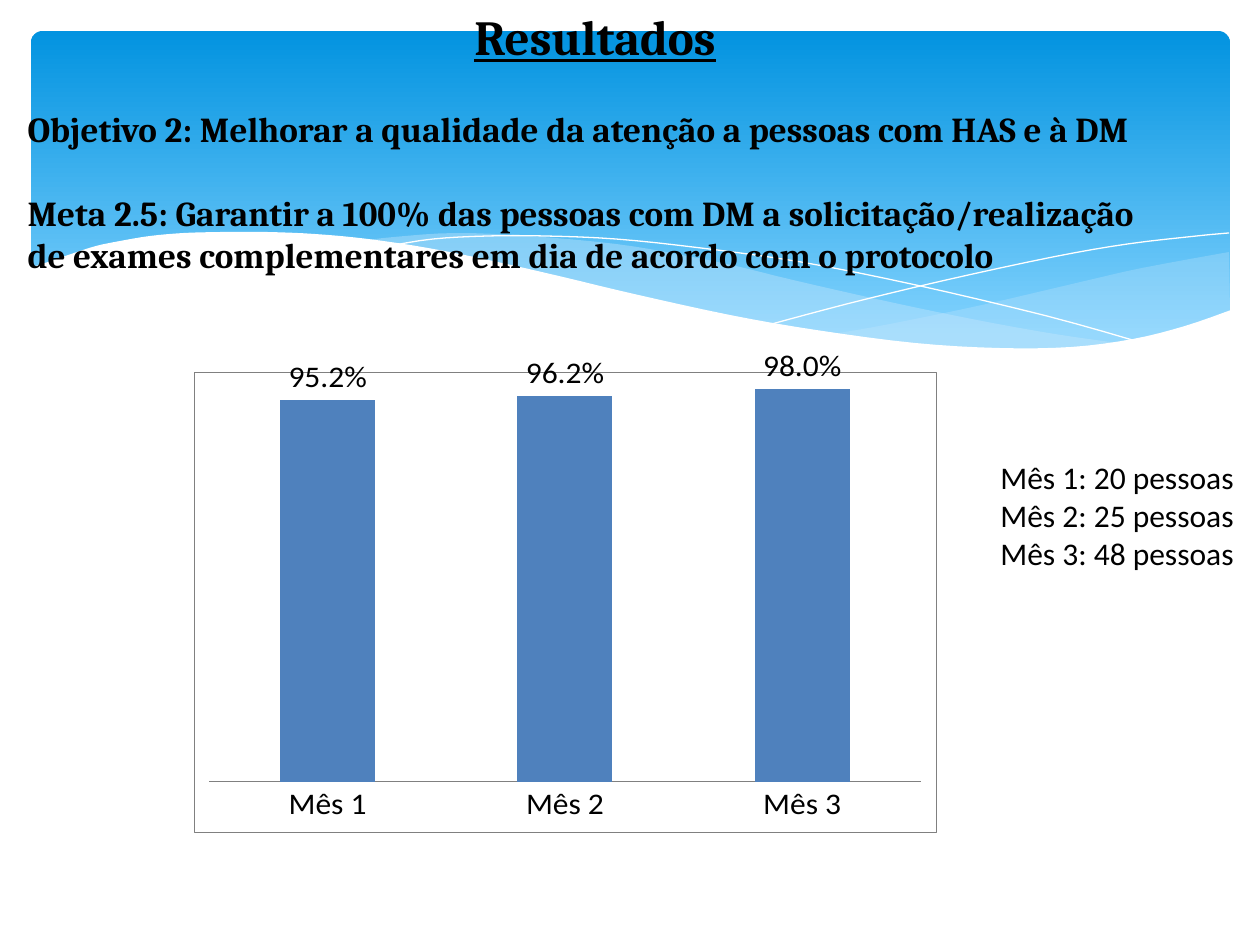
from dataclasses import dataclass

from lxml.etree import SubElement
from pptx import Presentation
from pptx.chart.data import CategoryChartData
from pptx.dml.color import RGBColor as Rgb
from pptx.enum.chart import XL_CHART_TYPE as ChartType
from pptx.enum.chart import XL_LABEL_POSITION as LabelPosition
from pptx.enum.chart import XL_TICK_MARK as TickMark
from pptx.enum.shapes import MSO_SHAPE as Preset
from pptx.enum.text import MSO_ANCHOR as Anchor
from pptx.enum.text import MSO_AUTO_SIZE as AutoSize
from pptx.enum.text import PP_ALIGN as Align
from pptx.oxml import parse_xml
from pptx.oxml.ns import nsdecls, qn
from pptx.util import Pt

SCALE = 914400 / 126


@dataclass(frozen=True)
class Theme:
    white: str = "FFFFFF"
    ink: str = "000000"
    sky_top: str = "0293E0"
    sky_bottom: str = "83D3FE"
    mist: str = "C6E7FC"
    bar: str = "4F81BD"
    rule: str = "808080"
    serif: str = "Cambria"
    sans: str = "Calibri"
    title_size: int = 28
    goal_size: int = 20
    note_size: int = 18
    chart_size: int = 10
    hairline: float = 0.25


THEME = Theme()

TITLE = ["Resultados"]
GOALS = [
    "Objetivo 2: Melhorar a qualidade da atenção a pessoas com HAS e à DM",
    "Meta 2.5: Garantir a 100% das pessoas com DM a solicitação/realização "
    "de exames complementares em dia de acordo com o protocolo",
]
NOTES = ["Mês 1: 20 pessoas", "Mês 2: 25 pessoas", "Mês 3: 48 pessoas"]
MONTHS = ["Mês 1", "Mês 2", "Mês 3"]
SHARES = [0.952, 0.962, 0.98]

SLIDE = (1260, 945)
BANNER_AT = (31, 31, 1199, 341)
TITLE_AT = (15, 0, 1160, 90)
GOALS_AT = (15, 101, 1160, 240)
NOTES_AT = (988, 452, 307, 127)
CHART_AT = (194, 348, 742, 484)

RIGHT_MIST = [
    [(1229, 252), (1142, 268), (1085, 281), (982, 305), (890, 324), (833, 334)],
    [(833, 334), (905, 343), (984, 349), (1026, 350), (1076, 348), (1130, 340),
     (1178, 329), (1213, 318), (1230, 311)],
]
MIDDLE_MIST = [
    [(1125, 344), (1055, 334), (977, 320), (890, 302), (793, 280), (736, 266),
     (682, 255), (616, 244), (529, 236), (455, 233), (394, 237), (360, 241)],
    [(360, 241), (431, 251), (509, 266), (566, 280), (668, 302), (757, 321),
     (838, 335), (910, 345), (974, 349), (1031, 350), (1080, 349), (1125, 344)],
]
FALLING_LINE = [
    [(389, 246), (433, 239), (488, 236), (545, 236), (616, 239), (701, 248),
     (801, 262), (916, 285), (1047, 316), (1143, 343)],
]
RISING_LINE = [
    [(772, 324), (847, 304), (942, 281), (1053, 257), (1128, 244), (1197, 236),
     (1229, 233)],
]
WHITE_WAVE = [
    [(1231, 310), (1185, 326), (1133, 339), (1071, 347), (999, 348), (915, 343),
     (816, 330), (730, 315), (634, 294), (563, 277), (493, 261), (428, 248),
     (368, 239), (315, 234), (266, 232), (223, 232), (184, 233), (150, 236),
     (120, 241), (96, 246), (74, 253), (45, 263), (29, 268)],
    [(29, 415), (1231, 415)],
]
WAVES = [
    (RIGHT_MIST, {"fill": THEME.mist, "alpha": 29}),
    (MIDDLE_MIST, {"fill": THEME.mist, "alpha": 40}),
    (FALLING_LINE, {"line": THEME.white}),
    (RISING_LINE, {"line": THEME.white}),
    (WHITE_WAVE, {"fill": THEME.white}),
]


def emu(*lengths):
    return [round(length * SCALE) for length in lengths]


def color(value):
    return Rgb.from_string(value)


def smooth_edge(knots, steps=4):
    padded = [knots[0], *knots, knots[-1]]
    points = [knots[0]]
    for a, b, c, d in zip(padded, padded[1:], padded[2:], padded[3:]):
        for step in range(1, steps + 1):
            t = step / steps
            points.append(tuple(
                (2 * q + (r - p) * t + (2 * p - 5 * q + 4 * r - s) * t**2
                 + (3 * q - p - 3 * r + s) * t**3) / 2
                for p, q, r, s in zip(a, b, c, d)))
    return points


def add_wave(page, edges, fill=None, line=None, alpha=None):
    points = [emu(*point) for edge in edges for point in smooth_edge(edge)]
    builder = page.shapes.build_freeform(*points[0], scale=1.0)
    builder.add_line_segments(points[1:], close=fill is not None)
    wave = builder.convert_to_shape()
    wave.shadow.inherit = False
    if fill:
        wave.fill.solid()
        wave.fill.fore_color.rgb = color(fill)
        wave.line.fill.background()
    else:
        wave.fill.background()
        wave.line.color.rgb = color(line)
        wave.line.width = Pt(0)
    if alpha:
        tint = next(wave.element.iter(qn("a:srgbClr")))
        SubElement(tint, qn("a:alpha")).set("val", str(alpha * 1000))


def add_banner(page):
    banner = page.shapes.add_shape(Preset.ROUNDED_RECTANGLE, *emu(*BANNER_AT))
    banner.adjustments[0] = 0.034
    banner.shadow.inherit = False
    banner.line.fill.background()
    banner.fill.gradient()
    banner.fill.gradient_angle = 270
    stops = [(0, THEME.sky_top), (0.9, THEME.sky_bottom)]
    for stop, (position, shade) in zip(banner.fill.gradient_stops, stops):
        stop.position = position
        stop.color.rgb = color(shade)


def set_font(font, size, name):
    font.size = Pt(size)
    font.name = name
    font.color.rgb = color(THEME.ink)


def write(box, at, lines, size, name, bold=False, underline=False,
          align=Align.LEFT, gap=0):
    box.left, box.top, box.width, box.height = emu(*at)
    frame = box.text_frame
    frame.word_wrap = True
    frame.auto_size = AutoSize.NONE
    frame.vertical_anchor = Anchor.TOP
    for index, line in enumerate(lines):
        para = frame.add_paragraph() if index else frame.paragraphs[0]
        para.alignment = align
        para.space_before = Pt(gap if index else 0)
        properties = para._p.get_or_add_pPr()
        properties.set("marL", "0")
        properties.set("indent", "0")
        SubElement(properties, qn("a:buNone"))
        span = para.add_run()
        span.text = line
        set_font(span.font, size, name)
        span.font.bold = bold
        span.font.underline = underline


def area_format(border=None):
    outline = (f'<a:ln w="{Pt(THEME.hairline)}"><a:solidFill><a:srgbClr val="{border}"/>'
               "</a:solidFill></a:ln>" if border else "")
    return parse_xml(f'<c:spPr {nsdecls("c", "a")}><a:solidFill><a:srgbClr '
                     f'val="{THEME.white}"/></a:solidFill>{outline}</c:spPr>')


def add_share_chart(page):
    data = CategoryChartData(number_format="0.0%")
    data.categories = MONTHS
    data.add_series("Series 1", SHARES)
    chart = page.shapes.add_chart(
        ChartType.COLUMN_CLUSTERED, *emu(*CHART_AT), data).chart
    chart.has_title = chart.has_legend = False
    set_font(chart.font, THEME.chart_size, THEME.sans)

    months, shares = chart.category_axis, chart.value_axis
    months.major_tick_mark = months.minor_tick_mark = TickMark.NONE
    months.format.line.color.rgb = color(THEME.rule)
    months.format.line.width = Pt(THEME.hairline)
    set_font(months.tick_labels.font, THEME.note_size, THEME.sans)
    shares.minimum_scale, shares.maximum_scale, shares.major_unit = 0, 1, 0.1
    shares.has_major_gridlines = False
    shares.visible = False

    plot = chart.plots[0]
    plot.gap_width, plot.overlap = 150, -25
    plot.vary_by_categories = False
    bars = plot.series[0]
    bars.format.fill.solid()
    bars.format.fill.fore_color.rgb = color(THEME.bar)
    labels = bars.data_labels
    labels.show_value = True
    labels.position = LabelPosition.OUTSIDE_END
    labels.number_format = "0.0%"
    labels.number_format_is_linked = False
    set_font(labels.font, THEME.note_size, THEME.sans)

    body = chart.element.find(qn("c:chart"))
    body.addnext(area_format(THEME.rule))
    body.find(qn("c:plotArea")).append(area_format())


def main():
    deck = Presentation()
    deck.slide_width, deck.slide_height = emu(*SLIDE)
    page = deck.slides.add_slide(deck.slide_layouts[1])
    title, goals = page.placeholders
    add_banner(page)
    for edges, look in WAVES:
        add_wave(page, edges, **look)
    for box in (title, goals):
        box.element.getparent().append(box.element)
    write(title, TITLE_AT, TITLE, THEME.title_size, THEME.serif,
          bold=True, underline=True, align=Align.CENTER)
    write(goals, GOALS_AT, GOALS, THEME.goal_size, THEME.serif, bold=True, gap=24)
    notes = page.shapes.add_textbox(*emu(*NOTES_AT))
    write(notes, NOTES_AT, NOTES, THEME.note_size, THEME.sans)
    add_share_chart(page)
    deck.save("out.pptx")


if __name__ == "__main__":
    main()
